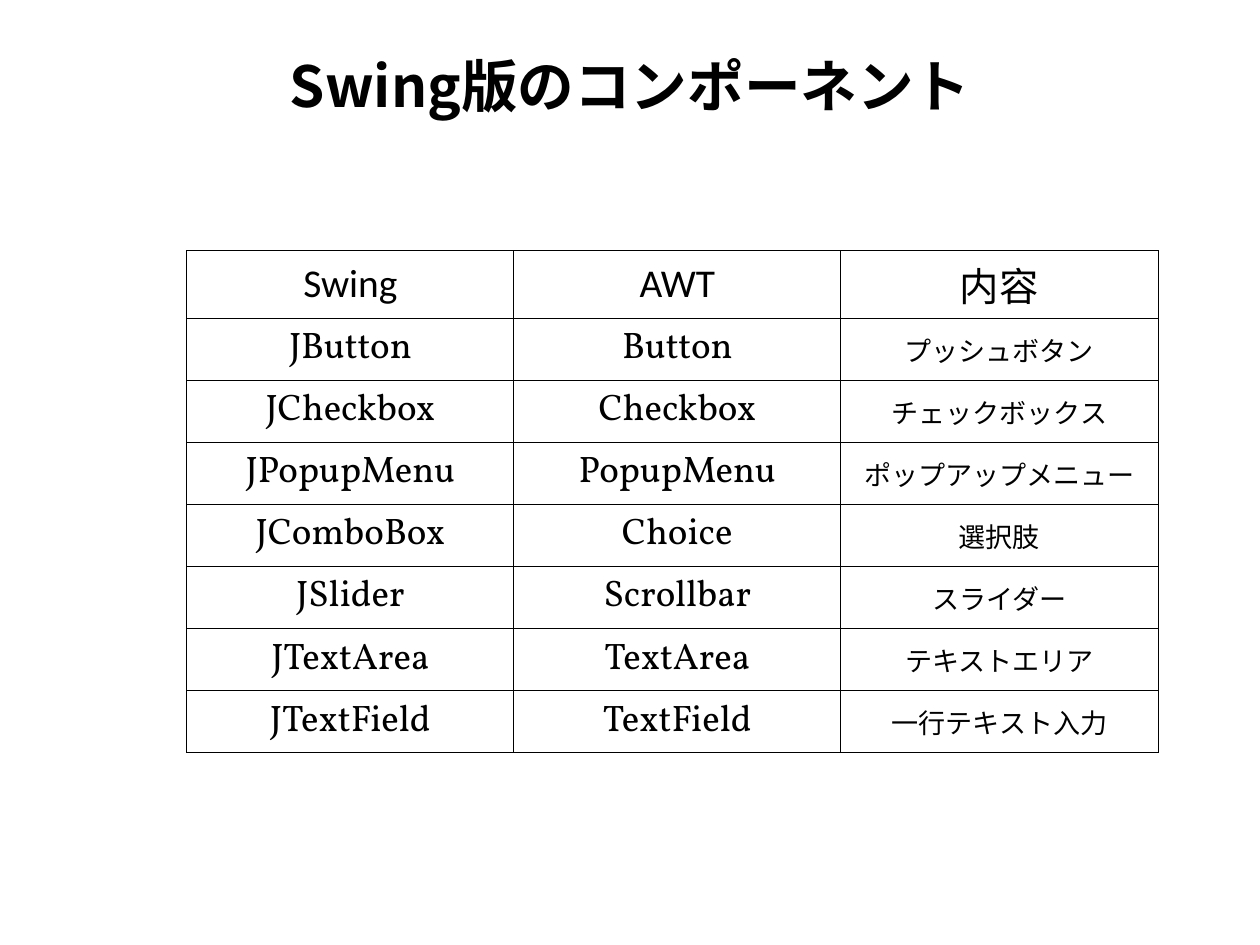
"""Build a slide with a table that pairs Swing components with AWT ones."""
from lxml.etree import SubElement
from pptx import Presentation
from pptx.dml.color import RGBColor
from pptx.enum.text import MSO_ANCHOR, MSO_AUTO_SIZE, PP_ALIGN
from pptx.oxml import parse_xml
from pptx.oxml.ns import nsdecls, qn
from pptx.util import Inches, Pt

TITLE = "Swing版のコンポーネント"
ROWS = [
    ("Swing", "AWT", "内容"),
    ("JButton", "Button", "プッシュボタン"),
    ("JCheckbox", "Checkbox", "チェックボックス"),
    ("JPopupMenu", "PopupMenu", "ポップアップメニュー"),
    ("JComboBox", "Choice", "選択肢"),
    ("JSlider", "Scrollbar", "スライダー"),
    ("JTextArea", "TextArea", "テキストエリア"),
    ("JTextField", "TextField", "一行テキスト入力"),
]
COLORS = {"text": "000000", "border": "000000", "cell": "FFFFFF"}
JAPANESE_FONT = "Noto Sans CJK JP"
TITLE_FONT = {"name": JAPANESE_FONT, "size": Pt(46), "bold": True}
HEADER_FONT = {"name": "Calibri", "size": Pt(32), "bold": False}
CLASS_FONT = {"name": "Vollkorn", "size": Pt(30), "bold": False}
NOTE_FONT = {"name": "Calibri", "size": Pt(22), "bold": False}
COLUMN_WIDTHS = [3.69, 3.69, 3.58]
ROW_HEIGHT = 0.7
BORDER_POINTS = 1
MARGINS = ("margin_left", "margin_right", "margin_top", "margin_bottom")


def set_margins(target, inches):
    for side in MARGINS:
        setattr(target, side, Inches(inches))


def write(frame, text, font):
    para = frame.paragraphs[0]
    para.alignment = PP_ALIGN.CENTER
    span = para.add_run()
    span.text = text
    for name, value in font.items():
        setattr(span.font, name, value)
    span.font.color.rgb = RGBColor.from_string(COLORS["text"])
    SubElement(span.font._element, qn("a:ea"), typeface=JAPANESE_FONT)


def add_borders(cell):
    properties = cell._tc.get_or_add_tcPr()
    for index, side in enumerate(("lnL", "lnR", "lnT", "lnB")):
        properties.insert(index, parse_xml(
            f'<a:{side} {nsdecls("a")} w="{Pt(BORDER_POINTS)}"><a:solidFill>'
            f'<a:srgbClr val="{COLORS["border"]}"/></a:solidFill></a:{side}>'))


def pick_font(row, column):
    if row == 0:
        return HEADER_FONT
    return NOTE_FONT if column == 2 else CLASS_FONT


def add_title(page):
    title = page.shapes.title
    title.left, title.top = Inches(1.39), Inches(0.28)
    title.width, title.height = Inches(11.44), Inches(1.35)
    frame = title.text_frame
    frame.auto_size = MSO_AUTO_SIZE.NONE
    frame.vertical_anchor = MSO_ANCHOR.MIDDLE
    set_margins(frame, 0)
    write(frame, TITLE, TITLE_FONT)


def add_components(page):
    table = page.shapes.add_table(
        len(ROWS), len(COLUMN_WIDTHS), Inches(2.11), Inches(2.83),
        Inches(sum(COLUMN_WIDTHS)), Inches(ROW_HEIGHT * len(ROWS))).table
    table.first_row = table.horz_banding = False
    for column, width in zip(table.columns, COLUMN_WIDTHS):
        column.width = Inches(width)
    for row, texts in enumerate(ROWS):
        for column, text in enumerate(texts):
            cell = table.cell(row, column)
            cell.vertical_anchor = MSO_ANCHOR.MIDDLE
            set_margins(cell, 0.06)
            cell.fill.solid()
            cell.fill.fore_color.rgb = RGBColor.from_string(COLORS["cell"])
            add_borders(cell)
            write(cell.text_frame, text, pick_font(row, column))


def main():
    deck = Presentation()
    deck.slide_width, deck.slide_height = Inches(14.22), Inches(10.67)
    page = deck.slides.add_slide(deck.slide_layouts[5])
    add_title(page)
    add_components(page)
    deck.save("out.pptx")


if __name__ == "__main__":
    main()
